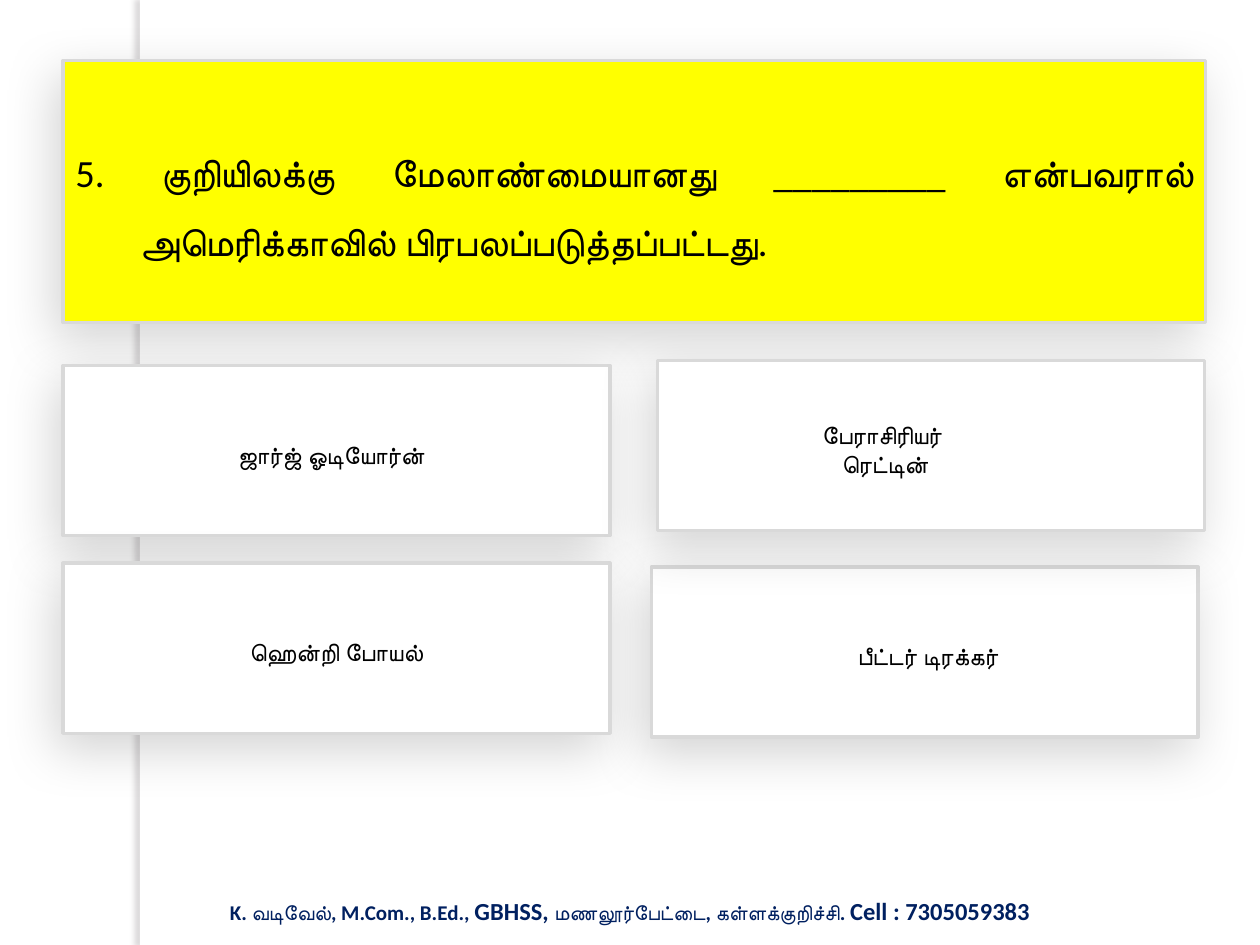
from dataclasses import dataclass

from lxml.etree import SubElement
from pptx import Presentation
from pptx.dml.color import RGBColor
from pptx.enum.shapes import MSO_SHAPE as Preset
from pptx.enum.text import MSO_ANCHOR as Anchor, MSO_AUTO_SIZE as AutoSize, PP_ALIGN as Align
from pptx.oxml.ns import qn
from pptx.util import Pt

EMU_PER_PX = 9144  # 100 px to the inch
FONT = "Calibri"
COLORS = {
    "white": "FFFFFF",
    "question": "FFFF00",
    "border": "D9D9D9",
    "text": "000000",
    "footer": "002060",
    "bar_shadow": "7A7276",
}


@dataclass(frozen=True)
class Shadow:
    color: str
    opacity: int
    blur: int
    distance: int
    angle: int


@dataclass(frozen=True)
class Line:
    text: str
    right_indent: int = 0


@dataclass(frozen=True)
class Card:
    left: int
    top: int
    lines: tuple[Line, ...]
    width: int = 434
    height: int = 135
    fill: str = "white"
    size: int = 14


BAR_SHADOW = Shadow("bar_shadow", 25, 3, 3, 180)
CARD_SHADOW = Shadow("text", 16, 30, 10, 118)

QUESTION = Card(
    50, 48,
    (Line("5. குறியிலக்கு மேலாண்மையானது _________ என்பவரால் "
          "அமெரிக்காவில் பிரபலப்படுத்தப்பட்டது."),),
    width=907, height=208, fill="question", size=22,
)
ANSWERS = (
    Card(517, 450, (Line(" பீட்டர் டிரக்கர்"),)),
    Card(50, 290, (Line("ஜார்ஜ் ஓடியோர்ன்", right_indent=8),)),
    Card(50, 447, (Line("ஹென்றி போயல்"),)),
    Card(522, 286, (Line("பேராசிரியர்", right_indent=78), Line(" ரெட்டின்"))),
)
FOOTER_RUNS = (
    ("K. வடிவேல், M.Com., B.Ed., ", 12),
    ("GBHSS, ", 14),
    ("மணலூர்பேட்டை, கள்ளக்குறிச்சி. ", 12),
    ("Cell : 7305059383", 14),
)


def px(length: int) -> int:
    return length * EMU_PER_PX


def rgb(name: str) -> RGBColor:
    return RGBColor.from_string(COLORS[name])


def format_run(run, size: int, color: str, bold: bool = False) -> None:
    run.font.name = FONT
    run.font.size = Pt(size)
    run.font.bold = bold
    run.font.color.rgb = rgb(color)


def add_shadow(shape, shadow: Shadow) -> None:
    shape.shadow.inherit = False
    effects = shape._element.spPr.find(qn("a:effectLst"))
    outer = SubElement(
        effects, qn("a:outerShdw"),
        blurRad=str(Pt(shadow.blur)), dist=str(Pt(shadow.distance)),
        dir=str(shadow.angle * 60000), algn="ctr", rotWithShape="0",
    )
    color = SubElement(outer, qn("a:srgbClr"), val=COLORS[shadow.color])
    SubElement(color, qn("a:alpha"), val=str(shadow.opacity * 1000))


def add_rectangle(slide, left: int, top: int, width: int, height: int,
                  fill: str, shadow: Shadow):
    shape = slide.shapes.add_shape(
        Preset.RECTANGLE, px(left), px(top), px(width), px(height))
    shape.fill.solid()
    shape.fill.fore_color.rgb = rgb(fill)
    shape.line.fill.background()
    add_shadow(shape, shadow)
    return shape


def add_card(slide, card: Card):
    shape = add_rectangle(slide, card.left, card.top, card.width, card.height,
                          card.fill, CARD_SHADOW)
    shape.line.color.rgb = rgb("border")
    shape.line.width = Pt(2)
    frame = shape.text_frame
    frame.word_wrap = True
    frame.vertical_anchor = Anchor.MIDDLE
    frame.margin_left = frame.margin_right = frame.margin_bottom = px(10)
    frame.margin_top = px(16)
    frame.text = "\n".join(line.text for line in card.lines)
    for paragraph, line in zip(frame.paragraphs, card.lines):
        paragraph.alignment = Align.CENTER
        if line.right_indent:
            paragraph._p.get_or_add_pPr().set("marR", str(px(line.right_indent)))
        for run in paragraph.runs:
            format_run(run, card.size, "text")
    return shape


def add_question(slide) -> None:
    """Add the wide card with a justified, hanging-indent paragraph."""
    paragraph = add_card(slide, QUESTION).text_frame.paragraphs[0]
    paragraph.alignment = Align.JUSTIFY
    paragraph.line_spacing = 1.5
    properties = paragraph._p.get_or_add_pPr()
    properties.set("marL", str(px(51)))
    properties.set("indent", str(px(-51)))


def add_footer(slide) -> None:
    box = slide.shapes.add_textbox(0, px(706), px(1000), px(34))
    frame = box.text_frame
    frame.word_wrap = True
    frame.auto_size = AutoSize.SHAPE_TO_FIT_TEXT
    paragraph = frame.paragraphs[0]
    paragraph.alignment = Align.CENTER
    for text, size in FOOTER_RUNS:
        run = paragraph.add_run()
        run.text = text
        format_run(run, size, "footer", bold=True)


def main() -> None:
    presentation = Presentation()
    presentation.slide_width = px(1000)
    presentation.slide_height = px(750)
    slide = presentation.slides.add_slide(presentation.slide_layouts[6])
    add_rectangle(slide, 111, 0, 8, 750, "white", BAR_SHADOW)
    add_question(slide)
    for answer in ANSWERS:
        add_card(slide, answer)
    add_footer(slide)
    presentation.save("out.pptx")


if __name__ == "__main__":
    main()
